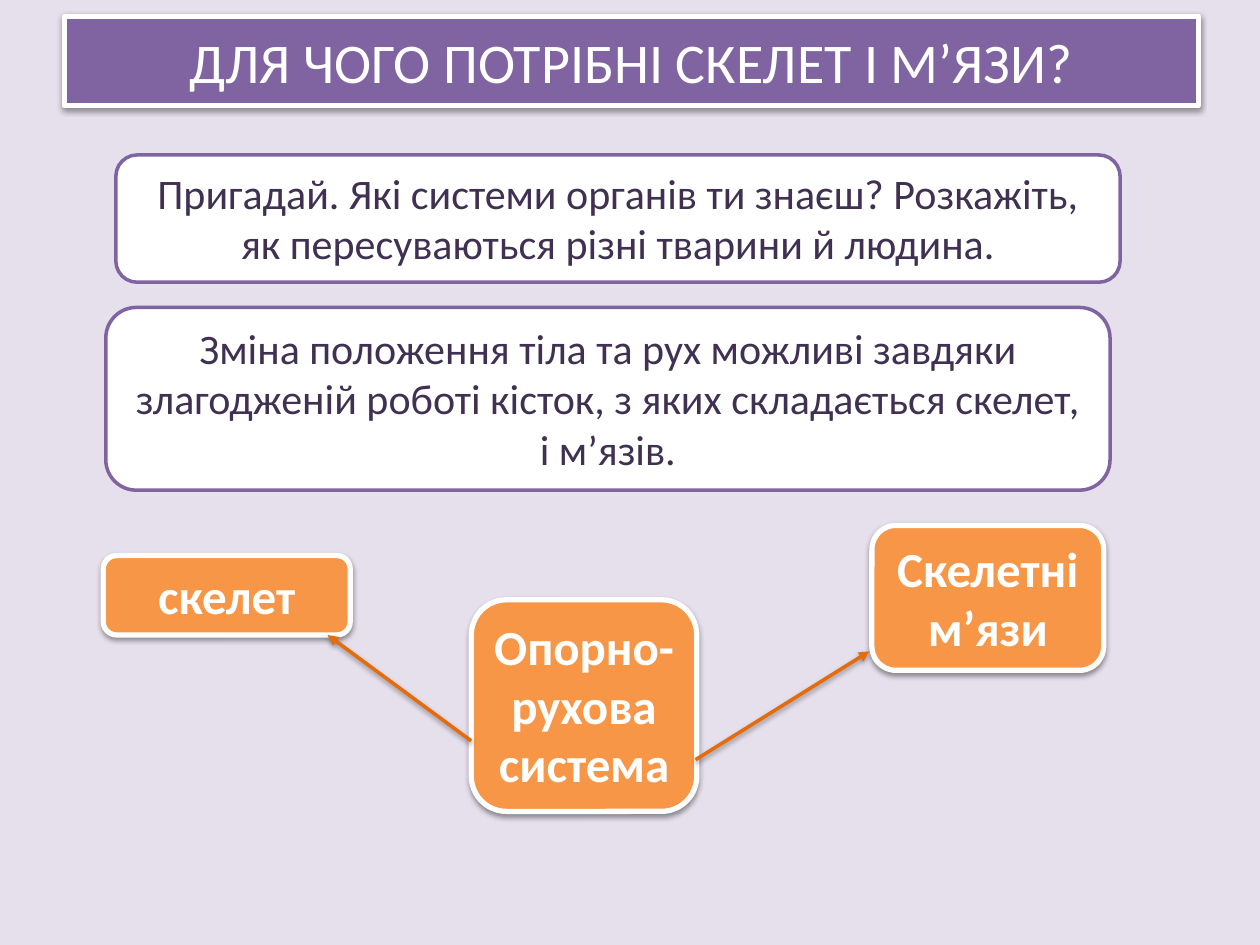
import pptx
import pptx.util
import pptx.dml.color
import pptx.enum.shapes
import pptx.enum.text
import pptx.oxml
import pptx.oxml.ns
from pptx.util import Inches

HUES = {
    "back": "E6E0EC", "plum": "8064A2", "ink": "403152",
    "gold": "F79646", "rust": "E46C0A", "white": "FFFFFF",
}
NS = pptx.oxml.ns.nsdecls("a")
SHADE = (
    f'<a:effectLst {NS}><a:outerShdw blurRad="40000" dist="20000" dir="5400000" '
    'rotWithShape="0"><a:srgbClr val="000000"><a:alpha val="38000"/></a:srgbClr>'
    '</a:outerShdw></a:effectLst>'
)


def hue(name):
    return pptx.dml.color.RGBColor.from_string(HUES[name])


class Deck:
    font = "Calibri"

    def __init__(self):
        self.prs = pptx.Presentation()
        self.prs.slide_width, self.prs.slide_height = Inches(10), Inches(7.5)
        self.slide = self.prs.slides.add_slide(self.prs.slide_layouts[6])
        fill = self.slide.background.fill
        fill.solid()
        fill.fore_color.rgb = hue("back")

    def shade(self, item):
        item._element.spPr.append(pptx.oxml.parse_xml(SHADE))

    def box(self, text, area, fill, edge, ink, size, width, bold=False,
            shade=True, grow=True):
        kind = pptx.enum.shapes.MSO_SHAPE.ROUNDED_RECTANGLE
        box = self.slide.shapes.add_shape(kind, *map(Inches, area))
        box.fill.solid()
        box.fill.fore_color.rgb = hue(fill)
        box.line.color.rgb = hue(edge)
        box.line.width = pptx.util.Pt(width)
        if shade:
            self.shade(box)
        else:
            box.shadow.inherit = False
        frame = box.text_frame
        frame.word_wrap = True
        if grow:
            frame.auto_size = pptx.enum.text.MSO_AUTO_SIZE.SHAPE_TO_FIT_TEXT
            frame.vertical_anchor = pptx.enum.text.MSO_ANCHOR.TOP
        else:
            frame.vertical_anchor = pptx.enum.text.MSO_ANCHOR.MIDDLE
        para = frame.paragraphs[0]
        para.alignment = pptx.enum.text.PP_ALIGN.CENTER
        run = para.add_run()
        run.text = text
        run.font.name = self.font
        run.font.size = pptx.util.Pt(size)
        run.font.bold = bold
        run.font.color.rgb = hue(ink)
        return box

    def title(self, text, area):
        box = self.box(text, area, "plum", "white", "white", 32, 3, grow=False)
        box.adjustments[0] = 0

    def note(self, text, area):
        self.box(text, area, "white", "plum", "ink", 24, 2, shade=False)

    def node(self, text, area):
        self.box(text, area, "gold", "white", "white", 28, 3, bold=True)

    def arrow(self, start, end):
        kind = pptx.enum.shapes.MSO_CONNECTOR.STRAIGHT
        line = self.slide.shapes.add_connector(kind, *map(Inches, start + end))
        line.line.color.rgb = hue("rust")
        line.line.width = pptx.util.Pt(2)
        line.line._get_or_add_ln().append(
            pptx.oxml.parse_xml(f'<a:tailEnd {NS} type="triangle"/>'))
        self.shade(line)


def main():
    deck = Deck()

    # Title and text panels
    deck.title("ДЛЯ ЧОГО ПОТРІБНІ СКЕЛЕТ І М’ЯЗИ?", (0.51, 0.13, 9, 0.71))
    deck.note("Пригадай. Які системи органів ти знаєш? Розкажіть, "
              "як пересуваються різні тварини й людина.",
              (0.92, 1.23, 7.97, 1.01))

    # System and its two parts
    deck.node("Опорно-рухова система", (3.74, 4.76, 1.79, 1.68))
    deck.node("Скелетні м’язи", (6.92, 4.17, 1.84, 1.15))
    deck.node("скелет", (0.82, 4.41, 1.96, 0.63))
    deck.arrow((5.52, 6.03), (6.9, 5.17))
    deck.arrow((3.74, 5.88), (2.6, 5.04))

    # Lower panel
    deck.note("Зміна положення тіла та рух можливі завдяки злагодженій роботі "
              "кісток, з яких складається скелет, і м’язів.",
              (0.84, 2.44, 7.97, 1.45))

    deck.prs.save("out.pptx")


if __name__ == "__main__":
    main()
